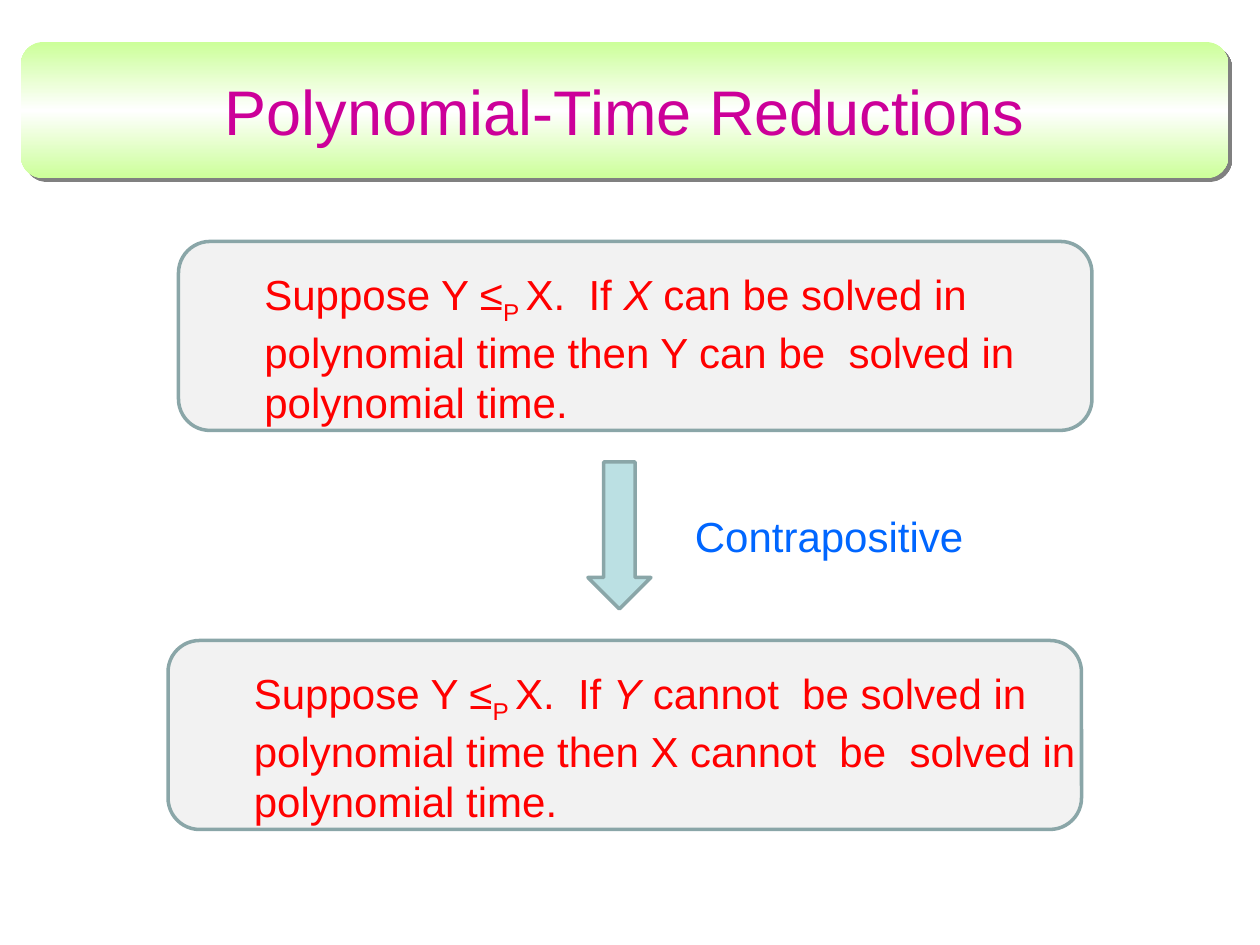
from copy import deepcopy
from dataclasses import dataclass

from lxml.etree import SubElement
from pptx import Presentation
from pptx.dml.color import RGBColor
from pptx.enum.shapes import MSO_SHAPE
from pptx.enum.text import MSO_ANCHOR, MSO_AUTO_SIZE, PP_ALIGN
from pptx.oxml.ns import qn
from pptx.util import Inches, Pt


@dataclass(frozen=True)
class Theme:
    font: str = "Arial"
    title_size: int = 36
    body_size: int = 24
    line_width: int = 2
    title: str = "CC0099"
    body: str = "FF0000"
    label: str = "0066FF"
    band_edge: str = "CCFF99"
    band_middle: str = "FFFFFF"
    band_shadow: str = "808080"
    panel: str = "F2F2F2"
    arrow: str = "BBE0E3"
    outline: str = "8AA6A8"


THEME = Theme()
COLS, ROWS = 120, 90  # grid of 1/12 inch cells


def rgb(value):
    return RGBColor.from_string(value)


def cells(*counts):
    return [Inches(n / 12) for n in counts]


def add_run(p, text, size, color, italic=False, baseline=0):
    r = p.add_run()
    r.text = text
    font = r.font
    font.name, font.size, font.italic = THEME.font, Pt(size), italic
    font.color.rgb = rgb(color)
    if baseline:
        r._r.get_or_add_rPr().set("baseline", str(baseline * 1000))


def add_text(shapes, box, wrap=True):
    """Add an empty text box and return its text frame."""
    tf = shapes.add_textbox(*cells(*box)).text_frame
    tf.word_wrap = wrap
    return tf


def add_outlined(shapes, preset, box, fill):
    sp = shapes.add_shape(preset, *cells(*box))
    sp.shadow.inherit = False
    sp.fill.solid()
    sp.fill.fore_color.rgb = rgb(fill)
    sp.line.color.rgb = rgb(THEME.outline)
    sp.line.width = Pt(THEME.line_width)


def fill_band(sp):
    """Fade from the edge colour to the middle colour and back, top to bottom."""
    sp.fill.gradient()
    sp.fill.gradient_angle = 270
    stops = sp.fill.gradient_stops
    for stop, position in zip(stops, (0, 1)):
        stop.color.rgb = rgb(THEME.band_edge)
        stop.position = position
    first = stops[0]._gs
    first.addnext(deepcopy(first))
    middle = sp.fill.gradient_stops[1]
    middle.color.rgb = rgb(THEME.band_middle)
    middle.position = 0.5


def cast_shadow(sp):
    """Cast a hard shadow down and to the right."""
    sp.shadow.inherit = False
    effects = sp._element.spPr.find(qn("a:effectLst"))
    shadow = SubElement(effects, qn("a:outerShdw"), dist=str(Pt(2.8)),
                        dir=str(45 * 60000), algn="ctr", rotWithShape="0")
    SubElement(shadow, qn("a:srgbClr"), val=THEME.band_shadow)


def title_band(slide, box, text):
    left, top, width, height = box
    sp = slide.shapes.add_shape(MSO_SHAPE.ROUNDED_RECTANGLE, *cells(*box))
    sp.line.fill.background()
    fill_band(sp)
    cast_shadow(sp)
    tf = add_text(slide.shapes, (left, top + 1, width, height - 2))
    tf.vertical_anchor = MSO_ANCHOR.MIDDLE
    p = tf.paragraphs[0]
    p.alignment = PP_ALIGN.CENTER
    add_run(p, text, THEME.title_size, THEME.title)


def statement(slide, box, problem, claim):
    """Panel that supposes Y ≤P X and states what follows for a problem."""
    left, top, width, height = box
    shapes = slide.shapes.add_group_shape().shapes
    add_outlined(shapes, MSO_SHAPE.ROUNDED_RECTANGLE, box, THEME.panel)
    tf = add_text(shapes, (left + 7, top + 2, width + 2, height - 2.3))
    p = tf.paragraphs[0]
    style = THEME.body_size, THEME.body
    add_run(p, "Suppose Y ≤", *style)
    add_run(p, "P ", *style, baseline=-25)
    add_run(p, "X.  If ", *style)
    add_run(p, problem, *style, italic=True)
    add_run(p, claim, *style)


def inference(slide, box, text):
    """Down arrow at the left of the box, with its label beside it."""
    left, top, width, height = box
    add_outlined(slide.shapes, MSO_SHAPE.DOWN_ARROW, (left, top, 6, height), THEME.arrow)
    tf = add_text(slide.shapes, (left + 9, top + 4, width - 9, 6), wrap=False)
    tf.auto_size = MSO_AUTO_SIZE.SHAPE_TO_FIT_TEXT
    add_run(tf.paragraphs[0], text, THEME.body_size, THEME.label)


def main():
    prs = Presentation()
    prs.slide_width, prs.slide_height = cells(COLS, ROWS)
    slide = prs.slides.add_slide(prs.slide_layouts[6])
    title_band(slide, (2, 4, 115, 13), "Polynomial-Time Reductions")
    statement(slide, (17, 23, 87, 18), "X",
              " can be solved in polynomial time then Y can be  solved in polynomial time.")
    statement(slide, (16, 61, 87, 18), "Y",
              " cannot  be solved in polynomial time then X cannot  be  solved in polynomial time.")
    inference(slide, (56, 44, 37.3, 14), "Contrapositive")
    prs.save("out.pptx")


if __name__ == "__main__":
    main()
